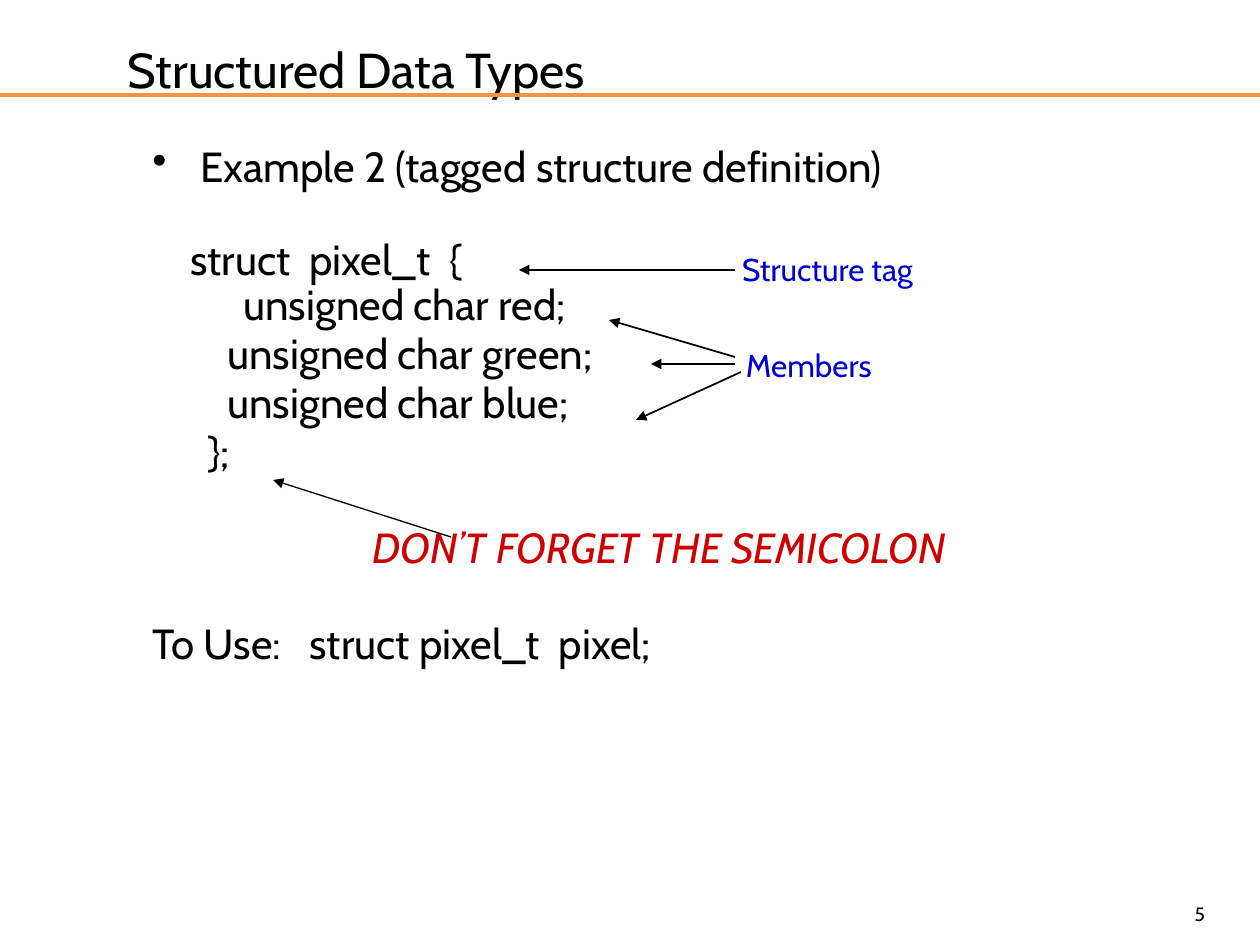
from lxml import etree
from pptx import Presentation
from pptx import util as u
from pptx.dml.color import RGBColor
from pptx.enum import shapes, text
from pptx.oxml import ns

BLACK = RGBColor(0, 0, 0)
BLUE = RGBColor(0, 0, 0xCC)
RED = RGBColor(0xCC, 0, 0)
ORANGE = RGBColor(0xF6, 0x92, 0x40)
SCALE = 914400 / 126


def px(n):
    return u.Emu(round(n * SCALE))


def write(para, words, size, color=BLACK):
    para.text = words
    font = para.font
    font.name, font.size, font.color.rgb = "Cabin", u.Pt(size), color


deck = Presentation()
deck.slide_width, deck.slide_height = px(1260), px(945)
slide = deck.slides.add_slide(deck.slide_layouts[6])

labels = [
    ("5", (955, 882, 262, 63), 11, BLACK, 12, text.PP_ALIGN.RIGHT),
    ("Structured Data Types", (116, 32, 1093, 73), 28, BLACK, 12, text.PP_ALIGN.LEFT),
    ("Structure tag", (742, 250, 231, 38), 18, BLUE, 0, text.PP_ALIGN.LEFT),
    ("Members", (746, 346, 231, 38), 18, BLUE, 0, text.PP_ALIGN.LEFT),
]
for words, area, size, color, inset, align in labels:
    frame = slide.shapes.add_textbox(*map(px, area)).text_frame
    frame.word_wrap = True
    frame.vertical_anchor = text.MSO_ANCHOR.MIDDLE
    frame.margin_left = frame.margin_right = px(inset)
    frame.margin_top = frame.margin_bottom = px(inset // 2)
    para = frame.paragraphs[0]
    write(para, words, size, color)
    para.alignment = align

body = slide.shapes.add_textbox(px(140), px(129), px(1113), px(714)).text_frame
body.word_wrap = True
rows = [
    ("Example 2 (tagged structure definition)", 48, 4.8),
    ("struct  pixel_t  {", 38, 30),
    ("unsigned char red;", 91, 3),
    ("unsigned char green;", 75, 4.8),
    ("unsigned char blue;", 75, 4.8),
    ("};", 56, 4.8),
    ("DON’T FORGET THE SEMICOLON", 220, 32),
    ("To Use:   struct pixel_t  pixel;", 0, 32),
]
for i, (words, left, gap) in enumerate(rows):
    para = body.add_paragraph() if i else body.paragraphs[0]
    shout = words.startswith("DON")
    write(para, words, 24, RED if shout else BLACK)
    para.font.italic = shout
    para.line_spacing = 0.8 if i else 1.1
    para.space_before = u.Pt(gap)
    props = para._p.get_or_add_pPr()
    props.set("marL", str(px(left)))
    props.set("indent", str(0 if i else -px(left)))
    if i == 0:
        dot = etree.Element(ns.qn("a:buChar"), char="•")
        props.find(ns.qn("a:defRPr")).addprevious(dot)

lines = [
    (609, 320, 735, 357, 1, BLACK),
    (636, 420, 741, 372, 1, BLACK),
    (519, 270, 735, 270, 1, BLACK),
    (273, 480, 451, 537, 0.75, BLACK),
    (651, 364, 735, 364, 1, BLACK),
    (0, 95, 1260, 95, 1.75, ORANGE),
]
for *ends, width, color in lines:
    line = slide.shapes.add_connector(shapes.MSO_CONNECTOR.STRAIGHT, *map(px, ends))
    line.line.width = u.Pt(width)
    line.line.color.rgb = color
    props = line._element.spPr
    if color == BLACK:
        etree.SubElement(props.find(ns.qn("a:ln")), ns.qn("a:headEnd"), type="triangle")
    etree.SubElement(props, ns.qn("a:effectLst"))

deck.save("out.pptx")
